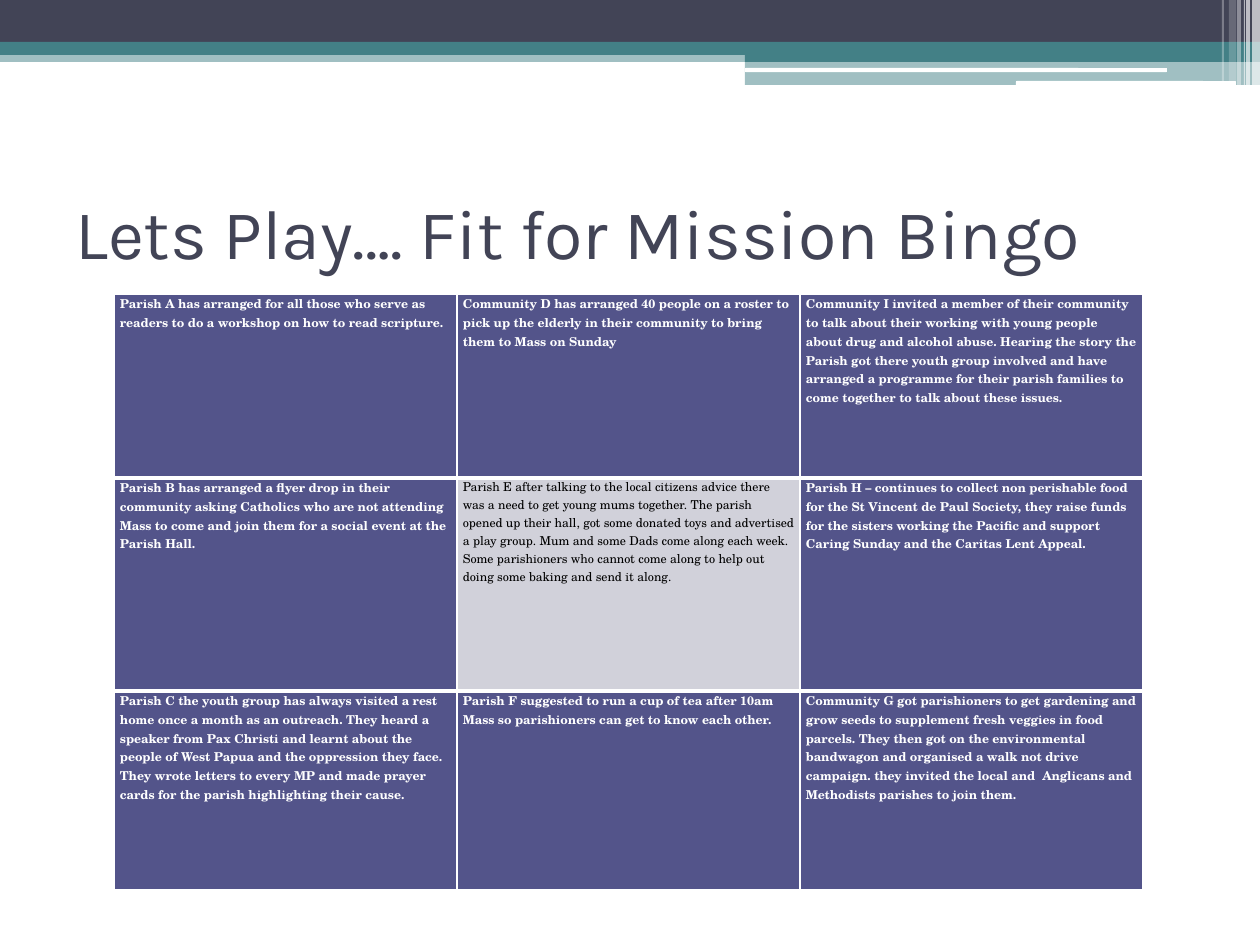
"""Build the Fit for Mission Bingo slide: header bands, title and a three by three grid."""
from pptx import Presentation
from pptx.dml.color import RGBColor
from pptx.enum.shapes import MSO_SHAPE
from pptx.enum.text import MSO_ANCHOR
from pptx.oxml import parse_xml
from pptx.oxml.ns import nsdecls
from pptx.util import Emu, Pt

PX = 914400 / 126
COLORS = {
    "navy": "424456",
    "teal": "438086",
    "white": "FFFFFF",
    "black": "000000",
    "indigo": "53548A",
    "grey": "D1D1DA",
}


def px(*lengths):
    return [Emu(round(length * PX)) for length in lengths]


def write(para, text, color, **font):
    span = para.add_run()
    span.text = text
    span.font.color.rgb = RGBColor.from_string(COLORS[color])
    for name, value in font.items():
        setattr(span.font, name, value)


deck = Presentation()
deck.slide_width, deck.slide_height = px(1260, 945)
page = deck.slides.add_slide(deck.slide_layouts[6])

RECT, ROUND = MSO_SHAPE.RECTANGLE, MSO_SHAPE.ROUNDED_RECTANGLE
bands = [
    (RECT, 0, 50, 1260, 12, "teal", 50),
    (RECT, 0, 0, 1260, 42, "navy", 100),
    (RECT, 0, 42, 1260, 13, "teal", 100),
    (RECT, 745, 49, 515, 13, "teal", 100),
    (RECT, 745, 62, 515, 23, "teal", 50),
    (ROUND, 745, 68, 422, 4, "white", 100),
    (ROUND, 1016, 81, 220, 5, "white", 100),
    (RECT, 1252, 0, 8, 85, "white", 65),
    (RECT, 1246, 0, 4, 85, "white", 65),
    (RECT, 1244, 0, 1, 85, "white", 60),
    (RECT, 1237, 0, 4, 85, "white", 40),
    (RECT, 1229, 0, 7, 81, "white", 20),
    (RECT, 1222, 0, 2, 81, "white", 30),
]
for preset, left, top, width, height, color, opacity in bands:
    band = page.shapes.add_shape(preset, *px(left, top, width, height))
    band.shadow.inherit = False
    band.line.fill.background()
    band.fill.solid()
    band.fill.fore_color.rgb = RGBColor.from_string(COLORS[color])
    if opacity < 100:
        shade = band.fill._xPr.find(".//{*}srgbClr")
        shade.append(parse_xml(f'<a:alpha {nsdecls("a")} val="{opacity * 1000}"/>'))

title = page.shapes.add_textbox(*px(63, 158, 1134, 147)).text_frame
title.word_wrap = True
title.vertical_anchor = MSO_ANCHOR.MIDDLE
write(title.paragraphs[0], "Lets Play…. Fit for Mission Bingo", "navy", name="Karla", size=Pt(40))

stories = [
    [
        "Parish A has arranged for all those who serve as readers to do a workshop on how to "
        "read scripture.",
        "Community D has arranged 40 people on a roster to pick up the elderly in their community "
        "to bring them to Mass on Sunday",
        "Community I invited a member of their community to talk about their working with young "
        "people about drug and alcohol abuse. Hearing the story the Parish got there youth group "
        "involved and have arranged a programme for their parish families to come together to "
        "talk about these issues.",
    ],
    [
        "Parish B has arranged a flyer drop in their community asking Catholics who are not "
        "attending Mass to come and join them for a social event at the Parish Hall.",
        "Parish E after talking to the local citizens advice there was a need to get young mums "
        "together. The parish opened up their hall, got some donated toys and advertised a play "
        "group. Mum and some Dads come along each week. Some parishioners who cannot come along "
        "to help out doing some baking and send it along.",
        "Parish H – continues to collect non perishable food for the St Vincent de Paul Society, "
        "they raise funds for the sisters working the Pacific and support Caring Sunday and the "
        "Caritas Lent Appeal.",
    ],
    [
        "Parish C the youth group has always visited a rest home once a month as an outreach. "
        "They heard a speaker from Pax Christi and learnt about the people of West Papua and the "
        "oppression they face. They wrote letters to every MP and made prayer cards for the "
        "parish highlighting their cause.",
        "Parish F suggested to run a cup of tea after 10am Mass so parishioners can get to know "
        "each other.",
        "Community G got parishioners to get gardening and grow seeds to supplement fresh veggies "
        "in food parcels. They then got on the environmental bandwagon and organised a walk not "
        "drive campaign. they invited the local and  Anglicans and Methodists parishes to join "
        "them.",
    ],
]
row_heights = px(184, 213, 199)
grid = page.shapes.add_table(3, 3, *px(114, 294, 1029, 596)).table
grid.first_row = grid.horz_banding = False
for column in grid.columns:
    column.width = px(343)[0]
for row, height in zip(grid.rows, row_heights):
    row.height = height

side_inset = px(6)[0]
cell_format = {"margin_left": side_inset, "margin_right": side_inset, "margin_top": 0, "margin_bottom": 0}
for row_index, row_stories in enumerate(stories):
    borders = {"L": 1, "R": 1, "T": 3 if row_index > 0 else 1, "B": 3 if row_index < 2 else 1}
    for column_index, story in enumerate(row_stories):
        cell = grid.cell(row_index, column_index)
        centre = row_index == column_index == 1
        for name, value in cell_format.items():
            setattr(cell, name, value)
        for side, points in borders.items():
            cell._tc.get_or_add_tcPr().append(parse_xml(
                f'<a:ln{side} {nsdecls("a")} w="{Pt(points)}"><a:solidFill>'
                f'<a:srgbClr val="{COLORS["white"]}"/></a:solidFill></a:ln{side}>'
            ))
        cell.fill.solid()
        cell.fill.fore_color.rgb = RGBColor.from_string(COLORS["grey" if centre else "indigo"])
        write(cell.text_frame.paragraphs[0], story, "black" if centre else "white",
              name="TeX Gyre Schola", size=Pt(7), bold=not centre)

deck.save("out.pptx")
